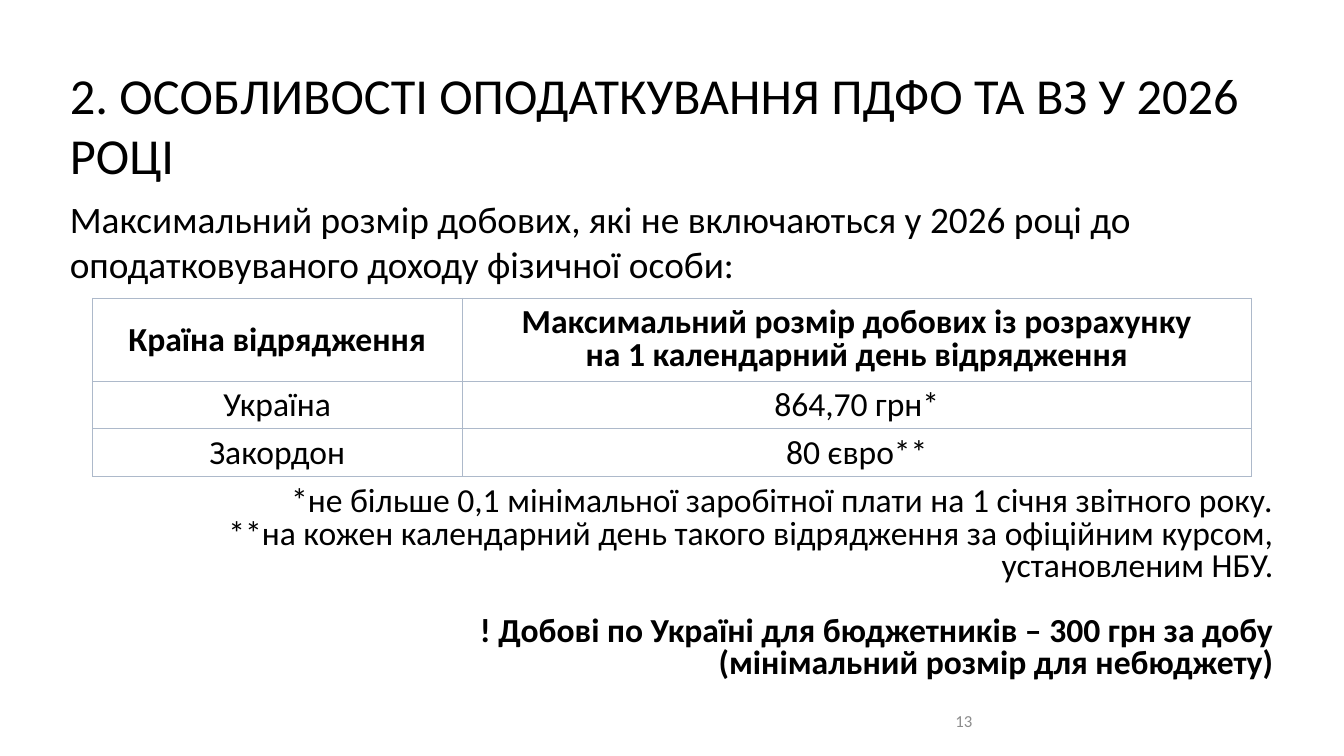
from dataclasses import dataclass

from lxml.etree import SubElement
from pptx import Presentation
from pptx.dml.color import RGBColor
from pptx.enum.text import MSO_ANCHOR, MSO_AUTO_SIZE, PP_ALIGN
from pptx.oxml.ns import qn
from pptx.util import Inches, Pt


@dataclass(frozen=True)
class Theme:
    font: str = "Calibri"
    ink: str = "000000"
    grey: str = "8C8C8C"
    rule: str = "ADB9CA"
    paper: str = "FFFFFF"
    head: int = 54
    lead: int = 40
    body: int = 36
    small: int = 18
    tight: float = 0.8


# Content
TITLE = "2. ОСОБЛИВОСТІ ОПОДАТКУВАННЯ ПДФО ТА ВЗ У 2026 РОЦІ"
LEAD = ("Максимальний розмір добових, які не включаються у 2026 році до "
        "оподатковуваного доходу фізичної особи:")
RATES = [
    ("Країна відрядження",
     "Максимальний розмір добових із розрахунку\nна 1 календарний день відрядження"),
    ("Україна", "864,70 грн*"),
    ("Закордон", "80 євро**"),
]
NOTES = [
    "*не більше 0,1 мінімальної заробітної плати на 1 січня звітного року.",
    "**на кожен календарний день такого відрядження за офіційним курсом, установленим НБУ.",
]
ALERT = [
    "! Добові по Україні для бюджетників – 300 грн за добу",
    "(мінімальний розмір для небюджету)",
]
PAGE = "13"

# Layout, in inches
WIDE, HIGH = 20, 11.25
LEFT, SPAN = 0.94, 18.11
COLS = (5.5, 11.75)
ROWS = (1.23, 0.7, 0.7)
GRID_TOP = 4.44
T = Theme()


def style(par, size, bold=False, color=T.ink, align=PP_ALIGN.LEFT, space=1.0):
    par.alignment = align
    par.line_spacing = space
    for run in par.runs:
        run.font.name = T.font
        run.font.size = Pt(size)
        run.font.bold = bold
        run.font.color.rgb = RGBColor.from_string(color)


def place(shape, left, top, width, height):
    shape.left, shape.top = Inches(left), Inches(top)
    shape.width, shape.height = Inches(width), Inches(height)


def write(shape, text, anchor=MSO_ANCHOR.TOP):
    frame = shape.text_frame
    frame.text = text
    frame.word_wrap = True
    frame.auto_size = MSO_AUTO_SIZE.NONE
    frame.vertical_anchor = anchor
    return frame.paragraphs


def add_text(slide, area, text, anchor=MSO_ANCHOR.TOP):
    box = slide.shapes.add_textbox(*map(Inches, area))
    return write(box, text, anchor)


def edge(cell):
    props = cell._tc.get_or_add_tcPr()
    for spot, side in enumerate(("lnL", "lnR", "lnT", "lnB")):
        line = props.makeelement(qn(f"a:{side}"), {"w": str(Pt(1))})
        fill = SubElement(line, qn("a:solidFill"))
        SubElement(fill, qn("a:srgbClr"), val=T.rule)
        props.insert(spot, line)


def add_rates(slide):
    left = (WIDE - sum(COLS)) / 2
    area = map(Inches, (left, GRID_TOP, sum(COLS), sum(ROWS)))
    table = slide.shapes.add_table(len(ROWS), len(COLS), *area).table
    for col, width in zip(table.columns, COLS):
        col.width = Inches(width)
    for row, height in zip(table.rows, ROWS):
        row.height = Inches(height)
    for r, texts in enumerate(RATES):
        for c, text in enumerate(texts):
            cell = table.cell(r, c)
            cell.text = text
            cell.vertical_anchor = MSO_ANCHOR.MIDDLE
            cell.fill.solid()
            cell.fill.fore_color.rgb = RGBColor.from_string(T.paper)
            edge(cell)
            space = T.tight if "\n" in text else 1.0
            for par in cell.text_frame.paragraphs:
                style(par, T.body, r == 0, align=PP_ALIGN.CENTER, space=space)


def main():
    deck = Presentation()
    deck.slide_width, deck.slide_height = Inches(WIDE), Inches(HIGH)
    slide = deck.slides.add_slide(deck.slide_layouts[5])

    # Title and lead
    title = slide.shapes.title
    place(title, LEFT, 0.9, SPAN, 1.92)
    style(write(title, TITLE)[0], T.head)
    style(add_text(slide, (LEFT, 2.87, SPAN, 1.45), LEAD)[0], T.lead)

    # Daily allowance table
    add_rates(slide)

    # Footnotes, then the bold remark one line lower
    pars = add_text(slide, (LEFT, 7.2, SPAN, 3.02), "\n".join(NOTES + ALERT))
    for i, par in enumerate(pars):
        style(par, T.body, i >= len(NOTES), align=PP_ALIGN.RIGHT, space=T.tight)
    pars[len(NOTES)].space_before = Pt(T.body * 0.97)

    # Page number
    foot = add_text(slide, (14.12, 10.43, 4.5, 0.6), PAGE, MSO_ANCHOR.MIDDLE)
    style(foot[0], T.small, color=T.grey)

    deck.save("out.pptx")


if __name__ == "__main__":
    main()
